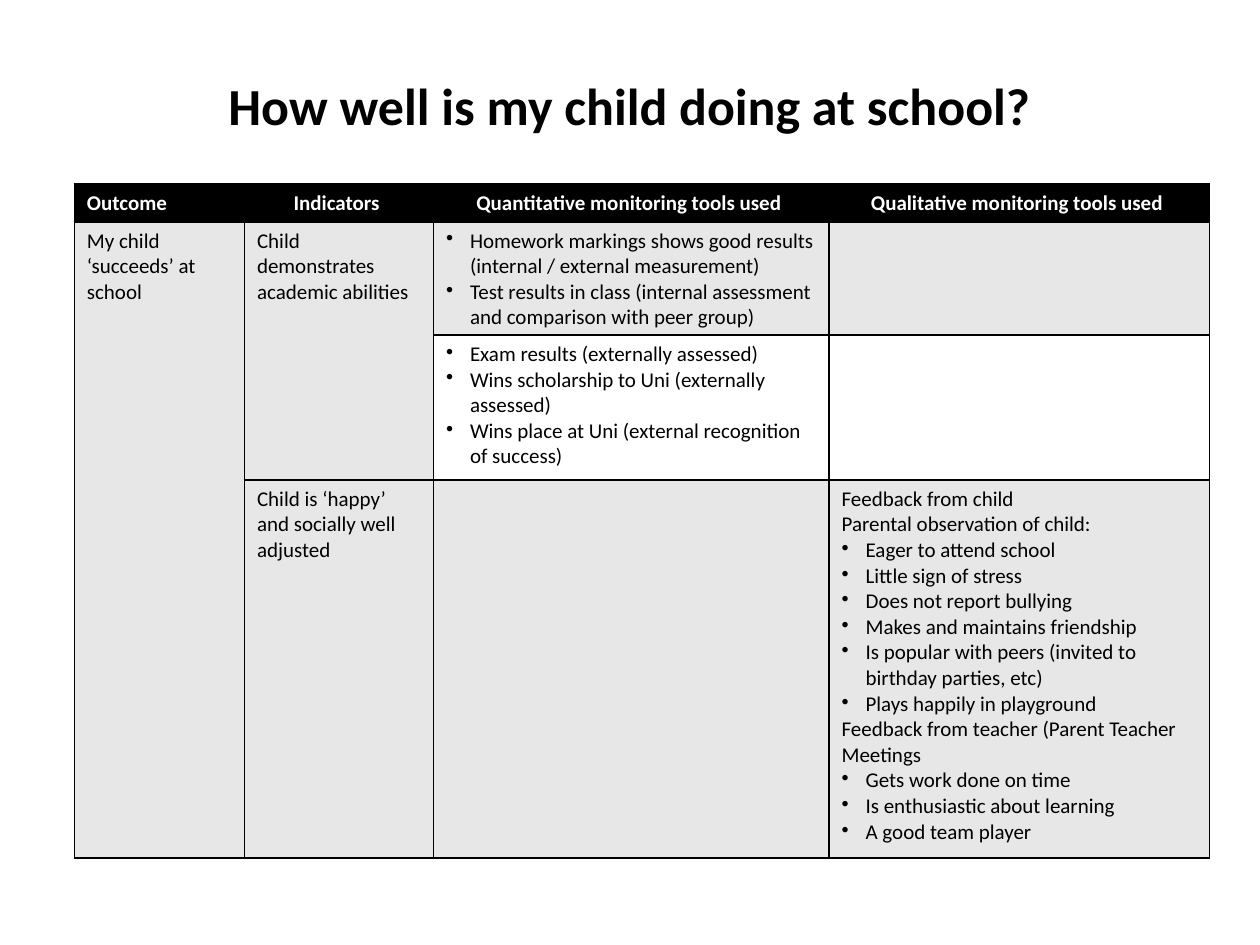
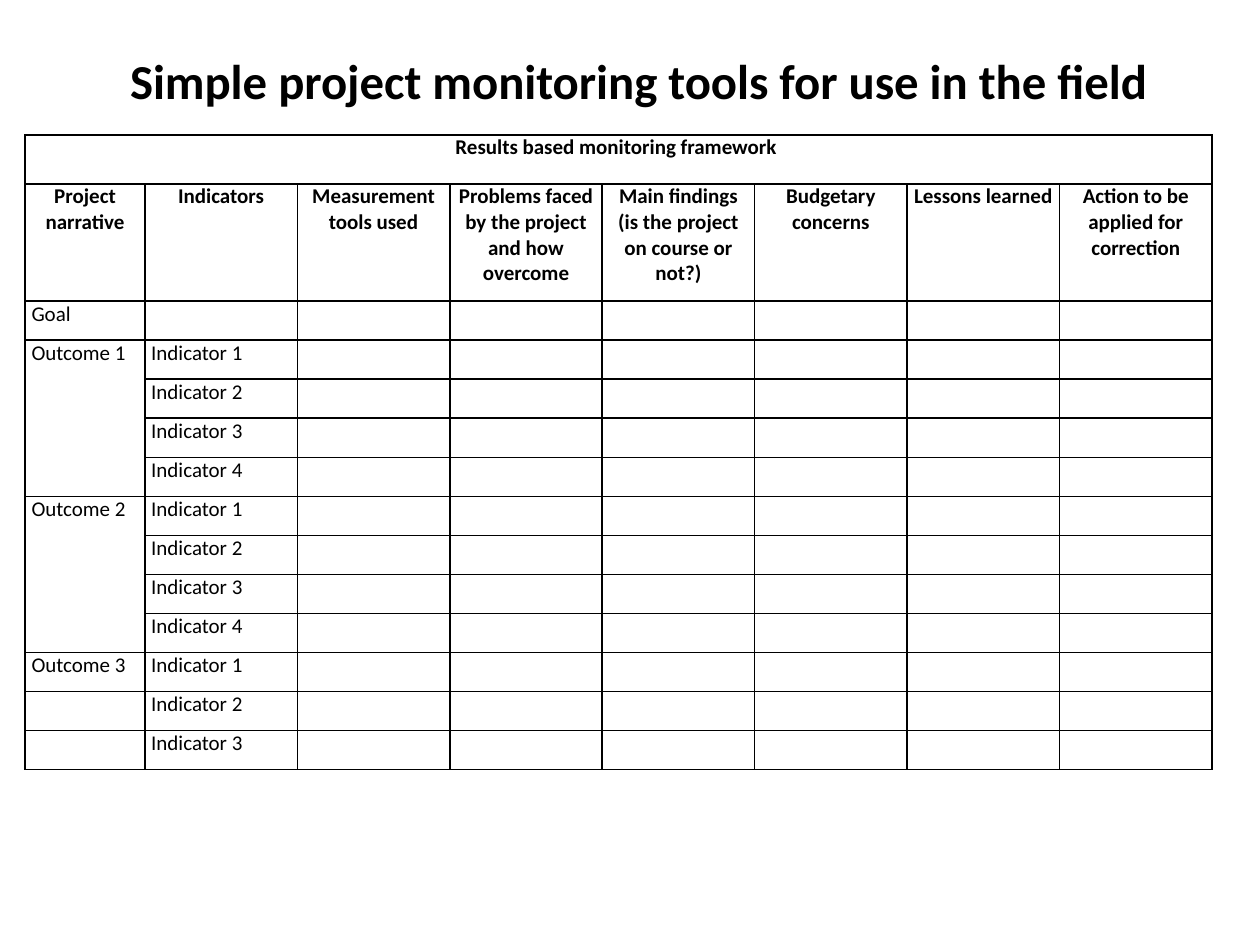
import lxml.etree
import pptx
import pptx.dml.color
import pptx.enum.text
import pptx.oxml.ns
import pptx.util

Inches = pptx.util.Inches
Pt = pptx.util.Pt
qn = pptx.oxml.ns.qn
ALIGN = pptx.enum.text.PP_ALIGN
ANCHOR = pptx.enum.text.MSO_ANCHOR

FONT = "Calibri"
SIZE = 12
BULLET = "•"
COLORS = {"black": "000000", "white": "FFFFFF", "grey": "E7E7E7"}

SCHOOL = [
    ["Outcome", "Indicators ", "Quantitative monitoring tools used ",
     "Qualitative monitoring tools used "],
    ["My child ‘succeeds’ at school", "Child demonstrates academic abilities",
     ["•Homework markings shows good results (internal / external measurement)",
      "•Test results in class (internal assessment and comparison with peer group)"], ""],
    ["", "",
     ["•Exam results (externally assessed)",
      "•Wins scholarship to Uni (externally assessed)",
      "•Wins place at Uni (external recognition of success)"], ""],
    ["", "Child is ‘happy’ and socially well adjusted", "",
     ["Feedback from child",
      "Parental observation of child:",
      "•Eager to attend school",
      "•Little sign of stress",
      "•Does not report bullying",
      "•Makes and maintains friendship",
      "•Is popular with peers (invited to birthday parties, etc)",
      "•Plays happily in playground",
      "Feedback from teacher (Parent Teacher Meetings",
      "•Gets work done on time",
      "•Is enthusiastic about learning",
      "•A good team player"]],
]

HEADS = ["Project narrative", "Indicators", "Measurement tools used",
         "Problems faced by the project and how overcome",
         "Main findings (is the project on course or not?)",
         "Budgetary concerns", "Lessons learned",
         "Action to be applied for correction"]
COUNTS = [4, 4, 3]


def paint(name):
    return pptx.dml.color.RGBColor.from_string(COLORS[name])


def add_run(para, text, size, color="black", bold=False):
    run = para.add_run()
    run.text = text
    run.font.name = FONT
    run.font.size = Pt(size)
    run.font.bold = bold
    run.font.color.rgb = paint(color)


def add_title(slide, text, box, size):
    frame = slide.shapes.add_textbox(*map(Inches, box)).text_frame
    frame.word_wrap = True
    frame.vertical_anchor = ANCHOR.MIDDLE
    frame.margin_top = frame.margin_bottom = 0
    para = frame.paragraphs[0]
    para.alignment = ALIGN.CENTER
    add_run(para, text, size, bold=True)


def add_bullet(para):
    props = para._p.get_or_add_pPr()
    props.set("marL", str(Inches(0.19)))
    props.set("indent", str(-Inches(0.19)))
    lxml.etree.SubElement(props, qn("a:buChar"), char=BULLET)


def add_border(cell):
    props = cell._tc.get_or_add_tcPr()
    for side in ("a:lnL", "a:lnR", "a:lnT", "a:lnB"):
        line = lxml.etree.SubElement(props, qn(side), w=str(Pt(1)))
        fill = lxml.etree.SubElement(line, qn("a:solidFill"))
        lxml.etree.SubElement(fill, qn("a:srgbClr"), val=COLORS["black"])


def fill_cell(cell, lines, color="black", bold=False, center=False, back=None):
    add_border(cell)
    if back:
        cell.fill.solid()
        cell.fill.fore_color.rgb = paint(back)
    else:
        cell.fill.background()
    frame = cell.text_frame
    for index, text in enumerate([lines] if isinstance(lines, str) else lines):
        para = frame.add_paragraph() if index else frame.paragraphs[0]
        if center:
            para.alignment = ALIGN.CENTER
        if text.startswith(BULLET):
            add_bullet(para)
        if text:
            add_run(para, text.removeprefix(BULLET), SIZE, color, bold)
        else:
            lxml.etree.SubElement(para._p, qn("a:endParaRPr"), sz=str(SIZE * 100))


def add_grid(slide, left, top, widths, heights):
    shape = slide.shapes.add_table(
        len(heights), len(widths), Inches(left), Inches(top),
        Inches(sum(widths)), Inches(sum(heights)))
    table = shape.table
    table.first_row = table.horz_banding = False
    for col, width in zip(table.columns, widths):
        col.width = Inches(width)
    for row, height in zip(table.rows, heights):
        row.height = Inches(height)
    return table


def merge(table, first, last):
    table.cell(*first).merge(table.cell(*last))


def add_school(slide):
    add_title(slide, "How well is my child doing at school?", (0.5, 0.52, 9, 0.63), 29.7)
    table = add_grid(slide, 0.59, 1.46, [1.35, 1.5, 3.14, 3.02], [0.26, 0.79, 1.15, 3])
    for r, row in enumerate(SCHOOL):
        for c, lines in enumerate(row):
            cell = table.cell(r, c)
            if r == 0:
                fill_cell(cell, lines, "white", True, c > 0, "black")
            else:
                fill_cell(cell, lines, back="white" if r == 2 and c > 1 else "grey")
    merge(table, (1, 0), (3, 0))
    merge(table, (1, 1), (2, 1))


def make_rows():
    rows = [["Results based monitoring framework "], HEADS, ["Goal"]]
    for group, count in enumerate(COUNTS, 1):
        for item in range(1, count + 1):
            rows.append([f"Outcome {group}" if item == 1 else "", f"Indicator {item}"])
    return [row + [""] * (len(HEADS) - len(row)) for row in rows]


def add_project(slide):
    add_title(slide, "Simple project monitoring tools for use in the field",
              (0.46, 0.4, 9.22, 0.47), 27.9)
    rows = make_rows()
    table = add_grid(slide, 0.2, 1.07, [0.95] + [1.21] * 7,
                     [0.39, 0.93] + [0.31] * (len(rows) - 2))
    for r, row in enumerate(rows):
        for c, text in enumerate(row):
            cell = table.cell(r, c)
            cell.margin_left = cell.margin_right = Inches(0.05)
            cell.margin_top = cell.margin_bottom = 0
            fill_cell(cell, text, bold=r < 2, center=r < 2)
    merge(table, (0, 0), (0, len(HEADS) - 1))
    for top in (3, 7):
        merge(table, (top, 0), (top + 3, 0))


def main():
    deck = pptx.Presentation()
    deck.slide_width = Inches(10)
    deck.slide_height = Inches(7.5)
    for build in (add_school, add_project):
        build(deck.slides.add_slide(deck.slide_layouts[6]))
    deck.save("out.pptx")


if __name__ == "__main__":
    main()
